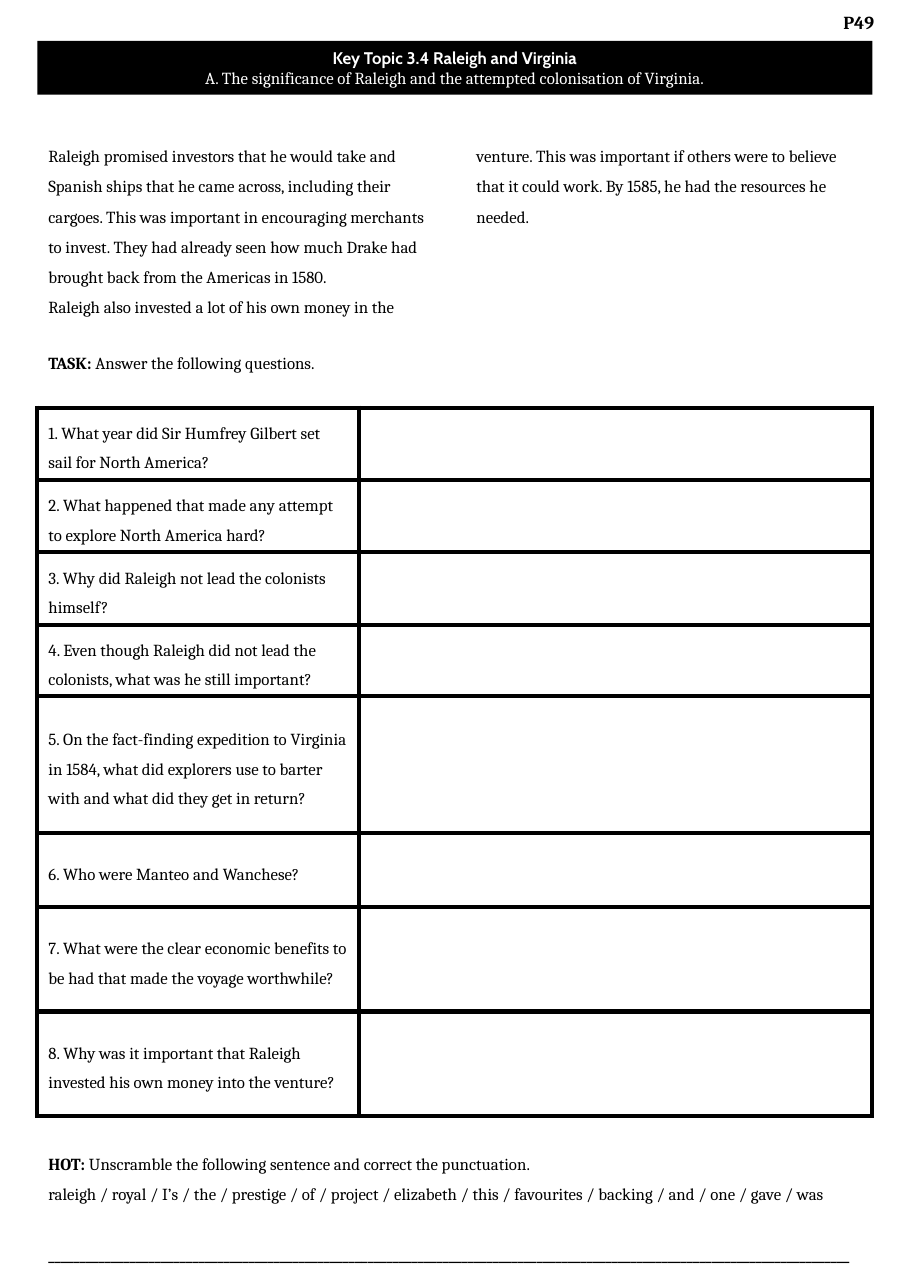
from lxml import etree
from pptx import Presentation
from pptx.dml.color import RGBColor
from pptx.enum.text import MSO_ANCHOR, MSO_AUTO_SIZE, PP_ALIGN
from pptx.oxml.ns import qn
from pptx.util import Emu, Inches, Pt

CENTER, LEFT = PP_ALIGN.CENTER, PP_ALIGN.LEFT
MIDDLE, TOP = MSO_ANCHOR.MIDDLE, MSO_ANCHOR.TOP
NO_FIT = MSO_AUTO_SIZE.NONE

# Content: each paragraph is a list of (text, bold) spans
COLORS = {"ink": "000000", "paper": "FFFFFF"}
SERIF, SANS = "Cambria", "Cabin"
PAGE_NUMBER = [[("P49", True)]]
TITLE = [
    [("Key Topic 3.4 Raleigh and Virginia", True)],
    [("A. The significance of Raleigh and the attempted colonisation of Virginia.", False)],
]
STORY = [
    [("Raleigh promised investors that he would take and Spanish ships that he came across, "
      "including their cargoes. This was important in encouraging merchants to invest. They had "
      "already seen how much Drake had brought back from the Americas in 1580.", False)],
    [("Raleigh also invested a lot of his own money in the venture. This was important if others "
      "were to believe that it could work. By 1585, he had the resources he needed.", False)],
]
TASK = [[("TASK: ", True), ("Answer the following questions.", False)]]
QUESTIONS = [  # question, row height in inches
    ("What year did Sir Humfrey Gilbert set sail for North America?", 0.66),
    ("What happened that made any attempt to explore North America hard?", 0.65),
    ("Why did Raleigh not lead the colonists himself?", 0.66),
    ("Even though Raleigh did not lead the colonists, what was he still important?", 0.65),
    ("On the fact-finding expedition to Virginia in 1584, what did explorers use to barter "
     "with and what did they get in return?", 1.24),
    ("Who were Manteo and Wanchese?", 0.67),
    ("What were the clear economic benefits to be had that made the voyage worthwhile?", 0.95),
    ("Why was it important that Raleigh invested his own money into the venture?", 0.95),
]
HOT = [
    [("HOT: ", True), ("Unscramble the following sentence and correct the punctuation.", False)],
    [("raleigh / royal / I’s / the / prestige / of / project / elizabeth / this / favourites / "
      "backing / and / one / gave / was", False)],
    [("_" * 128, True)],
]

# Page grid
PAGE_WIDTH, PAGE_HEIGHT = Inches(8.27), Inches(11.69)
MARGIN = Inches(0.34)
BODY_WIDTH = Inches(7.58)
QUESTION_WIDTH = Inches(2.92)
LINE_SPACING = 1.5


def color(name):
    return RGBColor.from_string(COLORS[name])


def write(frame, paragraphs, size=11, ink="ink", align=LEFT, spacing=LINE_SPACING, fonts=(SERIF,)):
    """Fill a text frame; the last font carries on to later paragraphs."""
    frame.word_wrap = True
    for index, spans in enumerate(paragraphs):
        para = frame.paragraphs[0] if index == 0 else frame.add_paragraph()
        para.alignment, para.line_spacing = align, spacing
        para.font.name = fonts[min(index, len(fonts) - 1)]
        para.font.size = Pt(size)
        para.font.color.rgb = color(ink)
        for text, bold in spans:
            span = para.add_run()
            span.text, span.font.bold = text, bold


def add_text(page, left, top, width, height, paragraphs, **style):
    box = page.shapes.add_textbox(left, Inches(top), width, Inches(height))
    write(box.text_frame, paragraphs, **style)
    return box.text_frame


def style_cell(cell):
    cell.fill.solid()
    cell.fill.fore_color.rgb = color("paper")
    cell.vertical_anchor = MIDDLE
    properties = cell._tc.get_or_add_tcPr()
    for index, side in enumerate(("lnL", "lnR", "lnT", "lnB")):
        line = etree.Element(qn(f"a:{side}"), w=str(Pt(3)))
        fill = etree.SubElement(line, qn("a:solidFill"))
        etree.SubElement(fill, qn("a:srgbClr"), val=COLORS["ink"])
        properties.insert(index, line)


def add_questions(page, top):
    heights = [Inches(height) for _, height in QUESTIONS]
    table = page.shapes.add_table(len(QUESTIONS), 2, MARGIN, Inches(top),
                                  BODY_WIDTH, Emu(sum(heights))).table
    table.first_row = table.horz_banding = False
    table.columns[0].width = QUESTION_WIDTH
    table.columns[1].width = BODY_WIDTH - QUESTION_WIDTH
    for index, (question, _) in enumerate(QUESTIONS):
        row = table.rows[index]
        row.height = heights[index]
        for cell in row.cells:
            style_cell(cell)
        write(row.cells[0].text_frame, [[(f"{index + 1}. {question}", False)]])


def main():
    deck = Presentation()
    deck.slide_width, deck.slide_height = PAGE_WIDTH, PAGE_HEIGHT
    page = deck.slides.add_slide(deck.slide_layouts[5])

    # Page number and title banner
    number = add_text(page, Inches(7.49), 0, Inches(0.61), 0.4, PAGE_NUMBER,
                      size=12, align=CENTER, spacing=1)
    number.margin_top = Inches(0.1)
    banner = page.shapes.title
    banner.left, banner.top = MARGIN, Inches(0.37)
    banner.width, banner.height = BODY_WIDTH, Inches(0.49)
    banner.fill.solid()
    banner.fill.fore_color.rgb = color("ink")
    banner.text_frame.auto_size = NO_FIT
    banner.text_frame.vertical_anchor = MIDDLE
    write(banner.text_frame, TITLE, ink="paper", align=CENTER, spacing=1, fonts=(SANS, SERIF))

    # Reading text in two columns
    story = add_text(page, MARGIN, 1.18, BODY_WIDTH, 1.88, STORY)
    story.auto_size, story.vertical_anchor = NO_FIT, TOP
    columns = story._txBody.bodyPr
    columns.set("numCol", "2")
    columns.set("spcCol", str(Inches(0.39)))

    # Task, question table and extension
    add_text(page, MARGIN, 3.06, BODY_WIDTH, 0.35, TASK)
    add_questions(page, 3.7)
    hot = add_text(page, MARGIN, 10.33, BODY_WIDTH, 1.18, HOT)
    hot.paragraphs[-1].space_before = Pt(20)

    deck.save("out.pptx")


if __name__ == "__main__":
    main()
